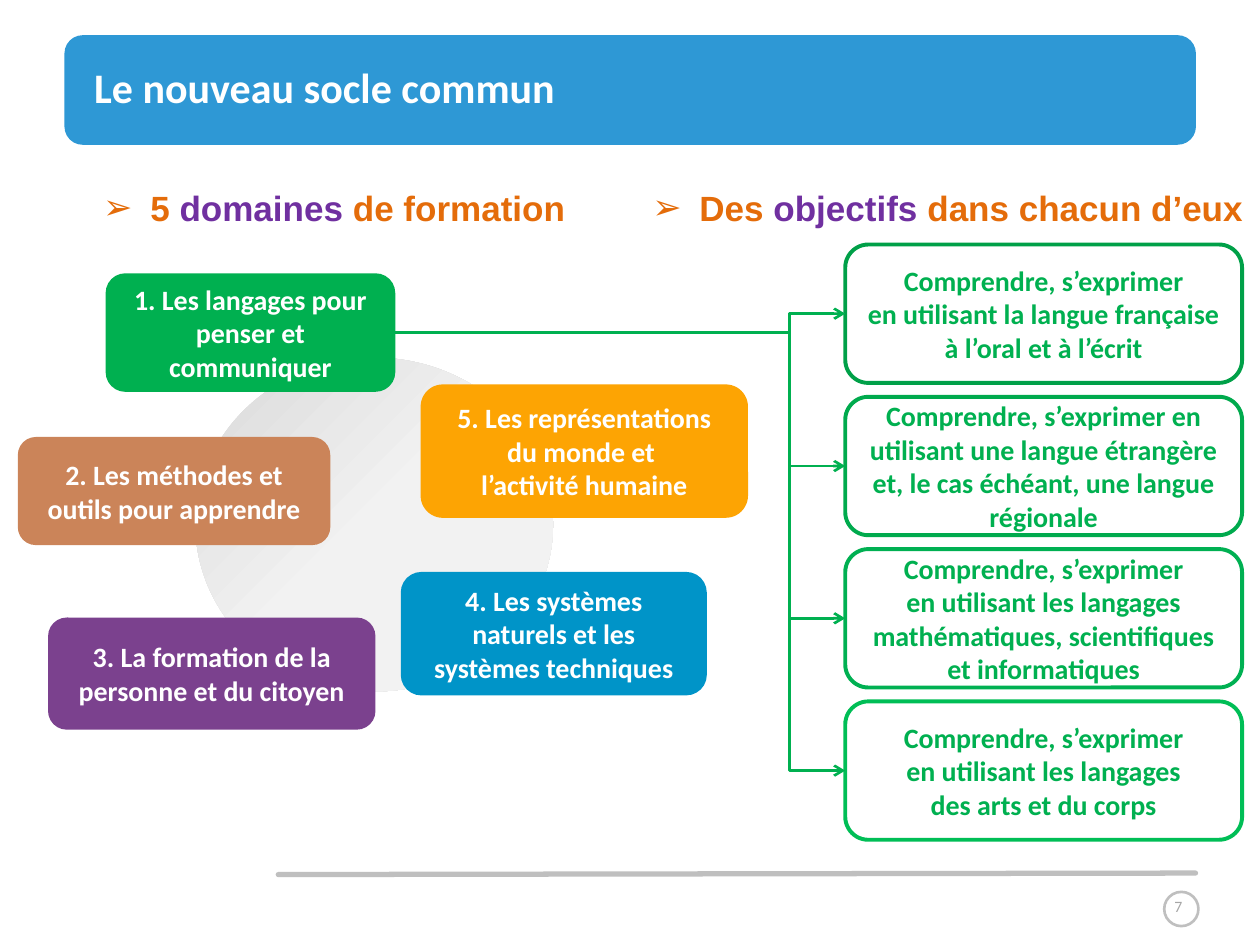
from lxml.etree import SubElement
from pptx import Presentation
from pptx.dml.color import RGBColor
from pptx.enum.shapes import MSO_CONNECTOR, MSO_SHAPE
from pptx.enum.text import MSO_ANCHOR, MSO_AUTO_SIZE, PP_ALIGN
from pptx.oxml import parse_xml
from pptx.oxml.ns import nsdecls, qn
from pptx.util import Cm, Pt

ORANGE, PURPLE, GREEN, GREY = "E46C0A", "7030A0", "00B050", "BFBFBF"
LEFT_SITE, RIGHT_SITE = 1, 3


def paint(fill, color):
    """Make a shape, line or font fill solid."""
    fill.solid()
    fill.fore_color.rgb = RGBColor.from_string(color)


def write(box, text, size, color, bold=True, align=PP_ALIGN.CENTER):
    """Put one vertically centred Calibri paragraph in a shape."""
    frame = box.text_frame
    frame.word_wrap = True
    frame.vertical_anchor = MSO_ANCHOR.MIDDLE
    paragraph = frame.paragraphs[0]
    paragraph.text = text
    paragraph.alignment = align
    paragraph.font.name = "Calibri"
    paragraph.font.size = Pt(size)
    paragraph.font.bold = bold
    paint(paragraph.font.fill, color)


deck = Presentation()
deck.slide_width, deck.slide_height = Cm(25.4), Cm(19.05)
page = deck.slides.add_slide(deck.slide_layouts[6])
shapes = page.shapes

# Title banner
banner = shapes.add_shape(MSO_SHAPE.ROUNDED_RECTANGLE, Cm(1.3), Cm(0.71), Cm(22.81), Cm(2.21))
banner.shadow.inherit = False
paint(banner.fill, "2E98D5")
banner.line.fill.background()
title = shapes.add_textbox(Cm(1.9), Cm(0.46), Cm(22.2), Cm(2.59))
frame = title.text_frame
frame.margin_left = frame.margin_right = frame.margin_top = frame.margin_bottom = 0
write(title, "Le nouveau socle commun", 24, "FFFFFF", align=PP_ALIGN.LEFT)

# Footer rule and page number
rule = shapes.add_connector(MSO_CONNECTOR.STRAIGHT, Cm(5.61), Cm(17.63), Cm(24.1), Cm(17.6))
rule.line.width = Pt(3)
paint(rule.line.fill, GREY)
rule.line._get_or_add_ln().set("cap", "rnd")
SubElement(rule._element.spPr, qn("a:effectLst"))
ring = shapes.add_shape(MSO_SHAPE.OVAL, Cm(23.47), Cm(17.98), Cm(0.69), Cm(0.69))
ring.shadow.inherit = False
ring.fill.background()
ring.line.width = Pt(1.5)
paint(ring.line.fill, GREY)
number = shapes.add_textbox(Cm(22.84), Cm(17.93), Cm(1.83), Cm(0.69))
write(number, "7", 9, "A6A6A6", bold=False)

# Shaded disc behind the domains
disc = shapes.add_shape(MSO_SHAPE.OVAL, Cm(3.94), Cm(7.21), Cm(7.21), Cm(6.73))
disc.shadow.inherit = False
disc.line.fill.background()
stops = "".join(
    f'<a:gs pos="{position}000"><a:srgbClr val="{color}"/></a:gs>'
    for position, color in ((0, "F2F2F2"), (50, "F2F2F2"), (100, "D9D9D9"))
)
disc._element.spPr.find(qn("a:prstGeom")).addnext(parse_xml(
    f'<a:gradFill {nsdecls("a")}><a:gsLst>{stops}</a:gsLst>'
    '<a:path path="circle"><a:fillToRect l="100000" t="100000"/></a:path></a:gradFill>'
))

# The five domains, the first one in front
domains = [
    ("4. Les systèmes naturels et les systèmes techniques", "0094C8", 8.08, 11.53, 6.17, 2.49),
    ("3. La formation de la personne et du citoyen", "7B418E", 0.97, 12.45, 6.6, 2.26),
    ("2. Les méthodes et outils pour apprendre", "CB8459", 0.36, 8.81, 6.3, 2.18),
    ("5. Les représentations du monde et \nl’activité humaine", "FDA403", 8.48, 7.75, 6.6, 2.69),
    ("1. Les langages pour penser et communiquer", GREEN, 2.13, 5.51, 5.84, 2.39),
]
for text, color, *place in domains:
    domain = shapes.add_shape(MSO_SHAPE.ROUNDED_RECTANGLE, *map(Cm, place))
    domain.shadow.inherit = False
    paint(domain.fill, color)
    domain.line.fill.background()
    write(domain, text, 16, "FFFFFF")
languages = domain

# Column headings
headings = [
    (1.83, 10.97, ("5 ", "domaines", " de formation")),
    (12.9, 12.52, ("Des ", "objectifs", " dans chacun d’eux")),
]
for left, width, parts in headings:
    heading = shapes.add_textbox(Cm(left), Cm(3.63), Cm(width), Cm(1.12))
    heading.text_frame.word_wrap = False
    heading.text_frame.auto_size = MSO_AUTO_SIZE.SHAPE_TO_FIT_TEXT
    paragraph = heading.text_frame.paragraphs[0]
    properties = paragraph._p.get_or_add_pPr()
    properties.set("marL", str(Cm(0.95)))
    properties.set("indent", str(Cm(-0.95)))
    SubElement(properties, qn("a:buFont"), typeface="Arial")
    SubElement(properties, qn("a:buChar"), char="➢")
    paragraph.font.name = "Arial"
    paragraph.font.size = Pt(20)
    paragraph.font.bold = True
    for part, color in zip(parts, (ORANGE, PURPLE, ORANGE)):
        span = paragraph.add_run()
        span.text = part
        paint(span.font.fill, color)

# Objectives of the first domain, each with its arrow
objectives = [
    ("Comprendre, s’exprimer\nen utilisant la langue française à l’oral et à l’écrit", "00A048"),
    ("Comprendre, s’exprimer en utilisant une langue étrangère et, le cas échéant, "
     "une langue régionale", "00AA4D"),
    ("Comprendre, s’exprimer\nen utilisant les langages mathématiques, scientifiques "
     "et informatiques", "00B052"),
    ("Comprendre, s’exprimer\nen utilisant les langages\ndes arts et du corps", "00BE56"),
]
for row, (text, outline) in enumerate(objectives):
    objective = shapes.add_shape(
        MSO_SHAPE.ROUNDED_RECTANGLE, Cm(17.04), Cm(4.93 + 3.07 * row), Cm(8), Cm(2.79))
    objective.shadow.inherit = False
    objective.fill.background()
    objective.line.width = Pt(2.25)
    paint(objective.line.fill, outline)
    write(objective, text, 16, GREEN)

    arrow = shapes.add_connector(MSO_CONNECTOR.ELBOW, 0, 0, 0, 0)
    arrow.begin_connect(languages, RIGHT_SITE)
    arrow.end_connect(objective, LEFT_SITE)
    arrow.line.width = Pt(1.5)
    paint(arrow.line.fill, GREEN)
    SubElement(arrow.line._get_or_add_ln(), qn("a:tailEnd"), type="arrow")
    SubElement(arrow._element.spPr, qn("a:effectLst"))
    guides = arrow._element.spPr.find(qn("a:prstGeom")).get_or_add_avLst()
    SubElement(guides, qn("a:gd"), name="adj1", fmla="val 87600")

deck.save("out.pptx")
